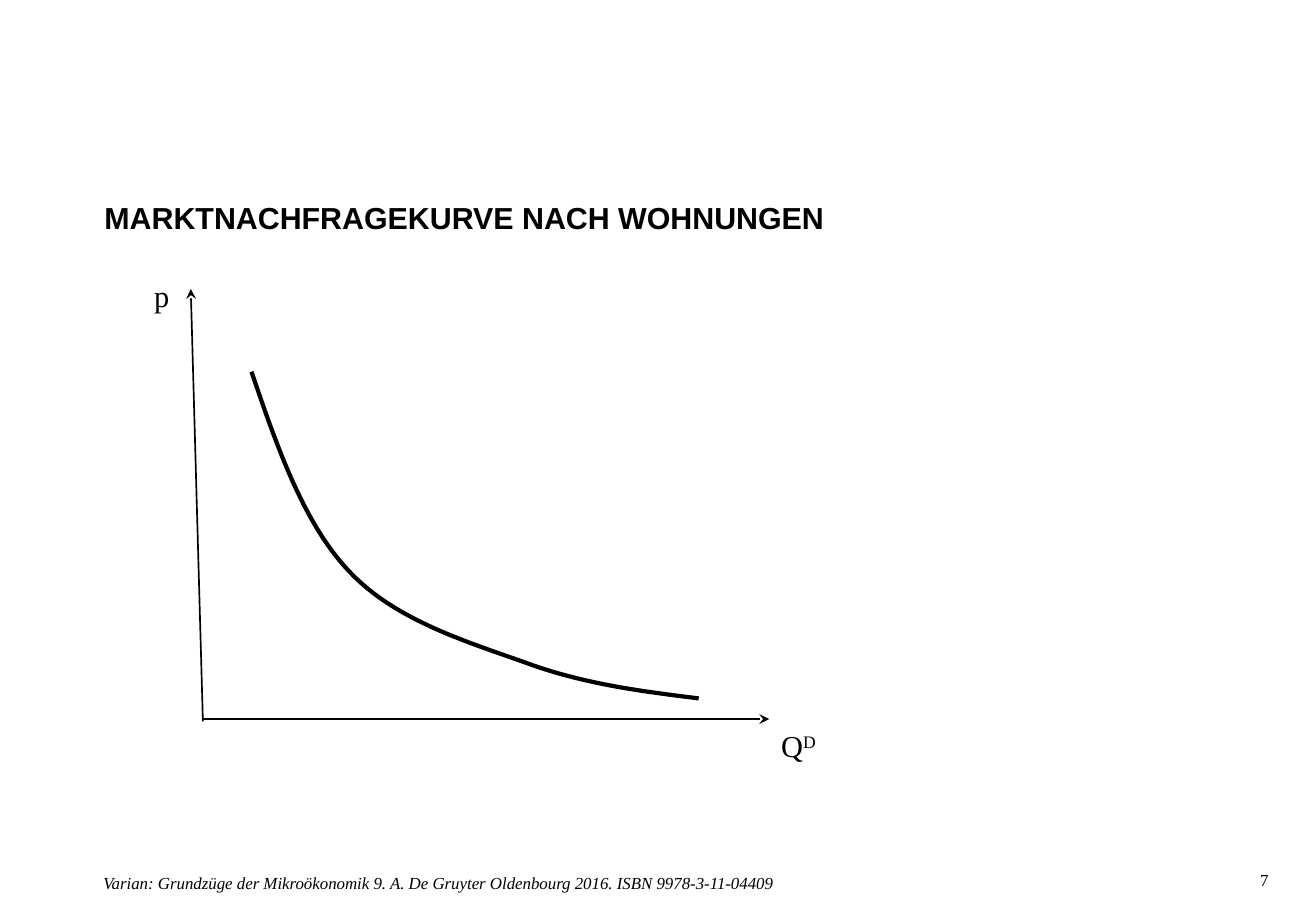
from lxml.etree import SubElement
from pptx import Presentation
from pptx.dml.color import RGBColor
from pptx.enum.shapes import MSO_CONNECTOR
from pptx.enum.text import MSO_ANCHOR, PP_ALIGN
from pptx.oxml.ns import qn
from pptx.util import Inches, Pt

WIDTH, HEIGHT = Inches(10.83), Inches(7.5)
COLORS = {"ink": "000000", "paper": "FFFFFF"}
SERIF = "Times New Roman"
LABEL_INSETS = (0.1, 0.05, 0.1, 0.05)
DEMAND = [
    (19.11, 40.8), (21.05, 49.07), (23.08, 57.47),
    (26.5, 62.67), (29.92, 68), (35.36, 70.4),
    (39.8, 72.67), (44.23, 75.07), (48.66, 75.87),
    (53.09, 76.67),
]
STEPS = 24


def color(name):
    return RGBColor.from_string(COLORS[name])


def place(x, y):
    return round(WIDTH * x / 100), round(HEIGHT * y / 100)


def format_line(line, width):
    line.color.rgb = color("ink")
    line.width = Pt(width)


def fill_text(sp, runs, size, font=SERIF, bold=False, italic=False,
              insets=(0, 0, 0, 0), wrap=True):
    tf = sp.text_frame
    tf.word_wrap = wrap
    tf.vertical_anchor = MSO_ANCHOR.TOP
    tf.margin_left, tf.margin_top, tf.margin_right, tf.margin_bottom = map(Inches, insets)
    p = tf.paragraphs[0]
    p.alignment = PP_ALIGN.LEFT
    for text, baseline in runs:
        r = p.add_run()
        r.text = text
        r.font.name, r.font.size = font, Pt(size)
        r.font.bold, r.font.italic = bold, italic
        r.font.color.rgb = color("ink")
        if baseline:
            r._r.get_or_add_rPr().set("baseline", str(baseline * 1000))


def add_title(s, text):
    sp = s.shapes.title
    sp.left, sp.top = place(7.94, 21.87)
    sp.width, sp.height = place(87.81, 7.2)
    fill_text(sp, [(text, 0)], 18, "Arial", bold=True, insets=(0, 0, 0.16, 0))


def add_text(s, x, y, w, h, runs, size, **style):
    sp = s.shapes.add_textbox(*place(x, y), *place(w, h))
    fill_text(sp, runs, size, **style)


def add_axis(s, start, tip):
    axis = s.shapes.add_connector(MSO_CONNECTOR.STRAIGHT, *place(*start), *place(*tip))
    format_line(axis.line, 1)
    SubElement(axis.line._get_or_add_ln(), qn("a:tailEnd"), type="stealth")
    SubElement(axis._element.spPr, qn("a:effectLst"))


def bezier(a, b, c, d, t):
    u = 1 - t
    return tuple(u**3 * i + 3 * u * u * t * j + 3 * u * t * t * k + t**3 * m
                 for i, j, k, m in zip(a, b, c, d))


def add_curve(s, controls):
    points = [place(*bezier(*controls[i:i + 4], n / STEPS))
              for i in range(0, len(controls) - 1, 3)
              for n in range(1, STEPS + 1)]
    builder = s.shapes.build_freeform(*place(*controls[0]))
    builder.add_line_segments(points, close=False)
    sp = builder.convert_to_shape()
    sp.shadow.inherit = False
    sp.fill.background()
    format_line(sp.line, 2.5)


def main():
    prs = Presentation()
    prs.slide_width, prs.slide_height = WIDTH, HEIGHT
    s = prs.slides.add_slide(prs.slide_layouts[5])
    s.background.fill.solid()
    s.background.fill.fore_color.rgb = color("paper")

    add_title(s, "MARKTNACHFRAGEKURVE NACH WOHNUNGEN")
    add_axis(s, (15.42, 79.2), (14.5, 31.73))
    add_axis(s, (15.42, 78.93), (58.45, 78.93))
    add_curve(s, DEMAND)
    add_text(s, 58.45, 79.2, 4.71, 5.33, [("Q", 0), ("D", 30)], 18,
             insets=LABEL_INSETS, wrap=False)
    add_text(s, 10.8, 29.73, 2.77, 5.33, [("p", 0)], 18, insets=LABEL_INSETS)
    add_text(s, 7.85, 95.73, 86.8, 2.67,
             [("Varian: Grundzüge der Mikroökonomik 9. A. De Gruyter Oldenbourg 2016. "
               "ISBN 9978-3-11-04409", 0)], 10, italic=True)
    add_text(s, 95.75, 95.47, 3.6, 2.67, [("7", 0)], 10)
    prs.save("out.pptx")


if __name__ == "__main__":
    main()
